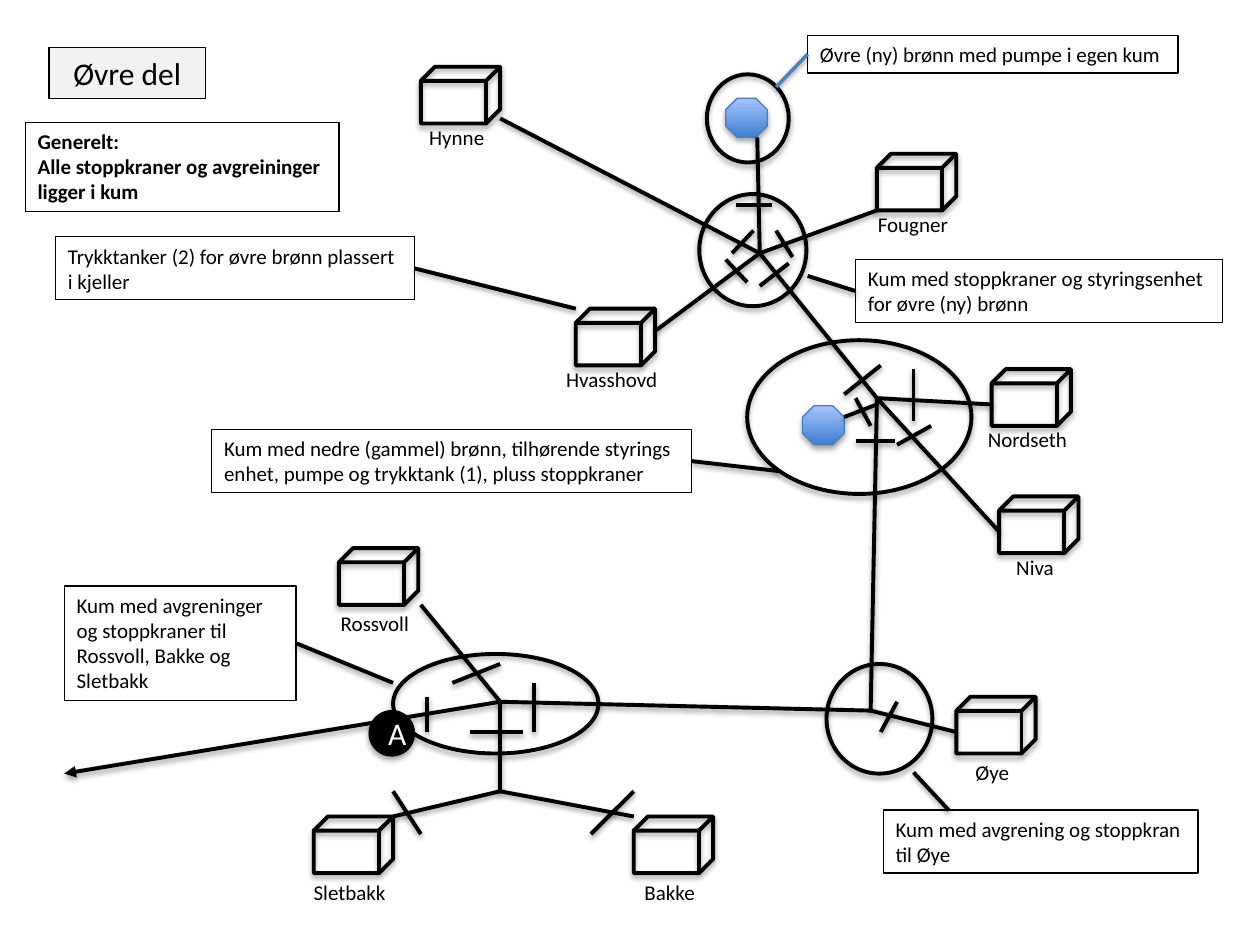
from lxml import etree
from pptx import Presentation
from pptx import util as u
from pptx.dml.color import RGBColor
from pptx.enum import shapes, text
from pptx.oxml import ns

BLACK = RGBColor(0x00, 0x00, 0x00)
WHITE = RGBColor(0xFF, 0xFF, 0xFF)
GREY = RGBColor(0xF2, 0xF2, 0xF2)
WELL_DARK = RGBColor(0x3F, 0x80, 0xCE)
WELL_LIGHT = RGBColor(0xA4, 0xC4, 0xFF)
WELL_EDGE = RGBColor(0x4B, 0x7E, 0xBC)
BLUE = RGBColor(0x4F, 0x81, 0xBD)

SHAPE = shapes.MSO_SHAPE
CENTER = text.PP_ALIGN.CENTER
LEFT_SIDE, RIGHT_SIDE = 1, 3
LABEL_WIDTH, LABEL_HEIGHT = 1.24, 0.3
HOUSE_SIZE = (0.63, 0.45)
WELL_SIZE = (0.33, 0.31)

# name, left, top, distance from house top to label top
HOUSES = [
    ("Hynne", 3.34, 0.53, 0.41), ("Fougner", 6.96, 1.22, 0.41),
    ("Hvasshovd", 4.57, 2.45, 0.41), ("Nordseth", 7.87, 2.93, 0.41),
    ("Niva", 7.93, 3.94, 0.41), ("Øye", 7.59, 5.53, 0.45),
    ("Rossvoll", 2.69, 4.35, 0.45), ("Bakke", 5.03, 6.48, 0.45),
    ("Sletbakk", 2.49, 6.48, 0.45),
]
MANHOLES = [
    (5.55, 1.54, 0.85, 0.89), (5.61, 0.59, 0.65, 0.7), (5.93, 2.7, 1.78, 1.22),
    (6.56, 5.27, 0.84, 0.87), (3.12, 5.19, 1.63, 0.79),
]
WELLS = [(5.76, 0.78), (6.37, 3.22)]

UPPER, LOWER, OYE, WEST, FORK = (6.03, 2.01), (6.96, 3.16), (6.91, 5.64), (3.97, 5.57), (3.97, 6.28)
# junction and the ends of the pipes that leave it
PIPES = [
    (UPPER, [(3.97, 0.94), (5.21, 2.62), (6.96, 1.67), (6.01, 1.09), LOWER]),
    (LOWER, [(7.87, 3.21), (7.93, 4.22), OYE]),
    (OYE, [WEST, (7.59, 5.81)]),
    (WEST, [FORK, (3.34, 4.8)]),
    (FORK, [(5.03, 6.48), (3.12, 6.48)]),
    ((6.7, 3.31), [(6.96, 3.21)]),
]
OUTLET = (0.51, 6.14)
VALVES = [
    ((5.76, 2.06), (5.93, 2.24)), ((6.16, 1.83), (6.29, 2.04)),
    ((5.98, 1.83), (5.81, 2.01)), ((6.03, 2.27), (6.26, 2.09)),
    ((5.84, 1.63), (6.13, 1.63)), ((7.25, 3.34), (7.25, 2.93)),
    ((7.12, 3.53), (7.39, 3.38)), ((6.79, 3.5), (7.1, 3.5)),
    ((6.7, 3.13), (6.99, 2.9)), ((6.91, 3.38), (6.79, 3.16)),
    ((7.12, 5.57), (6.99, 5.81)), ((3.59, 5.42), (3.97, 5.27)),
    ((3.73, 5.81), (4.15, 5.81)), ((3.39, 5.53), (3.39, 5.81)),
    ((4.24, 5.81), (4.24, 5.42)), ((4.69, 6.62), (5.03, 6.28)),
    ((3.12, 6.28), (3.34, 6.62)),
]
# wording, box, wrap, side the pointer leaves from, pointer end, pointer format
NOTES = [
    ("Kum med stoppkraner og styringsenhet\nfor øvre (ny) brønn",
     (6.79, 2.06, 2.91, 0.5), False, LEFT_SIDE, (6.41, 2.19), {}),
    ("Øvre (ny) brønn med pumpe i egen kum",
     (6.41, 0.28, 2.94, 0.3), False, LEFT_SIDE, (6.16, 0.69), {"color": BLUE, "width": 2}),
    ("Trykktanker (2) for øvre brønn plassert\ni kjeller",
     (0.44, 1.88, 2.85, 0.5), False, RIGHT_SIDE, (4.57, 2.45), {}),
    ("Kum med nedre (gammel) brønn, tilhørende styrings\n"
     "enhet, pumpe og trykktank (1), pluss stoppkraner",
     (1.68, 3.41, 3.81, 0.5), False, RIGHT_SIDE, (6.19, 3.74), {}),
    ("Kum med avgreninger og stoppkraner til Rossvoll, Bakke og Sletbakk",
     (0.51, 4.65, 1.84, 0.91), True, RIGHT_SIDE, (3.12, 5.42), {}),
]


def inches(values):
    return [u.Inches(v) for v in values]


def add_shadow(effects, dist, alpha):
    shadow = etree.SubElement(effects, ns.qn("a:outerShdw"), blurRad="40000",
                              dist=str(dist), dir="5400000", rotWithShape="0")
    color = etree.SubElement(shadow, ns.qn("a:srgbClr"), val="000000")
    etree.SubElement(color, ns.qn("a:alpha"), val=str(alpha))


def set_line(sp, color=BLACK, width=0.75):
    sp.line.color.rgb = color
    sp.line.width = u.Pt(width)


def write(tf, words, size=12, color=BLACK, bold=False, align=None):
    tf.text = words
    font_values = {"name": "Calibri", "size": u.Pt(size), "bold": bold}
    for p in tf.paragraphs:
        p.alignment = align
        for r in p.runs:
            for key, value in font_values.items():
                setattr(r.font, key, value)
            r.font.color.rgb = color


def add_symbol(s, kind, box, color=BLACK, width=2.25):
    """Add an unfilled preset shape with a soft shadow."""
    sp = s.shapes.add_shape(kind, *inches(box))
    sp.fill.background()
    set_line(sp, color, width)
    sp.shadow.inherit = False
    add_shadow(sp._element.spPr.find(ns.qn("a:effectLst")), 23000, 35000)
    return sp


def add_text(s, words, box, wrap=True, **font):
    sp = s.shapes.add_textbox(*inches(box))
    tf = sp.text_frame
    tf.word_wrap = wrap
    tf.auto_size = text.MSO_AUTO_SIZE.SHAPE_TO_FIT_TEXT
    write(tf, words, **font)
    return sp


def add_note(s, words, box, wrap=False, **font):
    sp = add_text(s, words, box, wrap, **font)
    set_line(sp)
    return sp


def add_line(s, start, end, color=BLACK, width=2.25, arrow=False):
    line = s.shapes.add_connector(shapes.MSO_CONNECTOR.STRAIGHT, *inches(start + end))
    set_line(line, color, width)
    sp_pr = line._element.spPr
    if arrow:
        etree.SubElement(sp_pr.find(ns.qn("a:ln")), ns.qn("a:tailEnd"), type="triangle")
    add_shadow(etree.SubElement(sp_pr, ns.qn("a:effectLst")), 20000, 38000)
    return line


def add_house(s, name, left, top, label_drop):
    add_symbol(s, SHAPE.CUBE, (left, top) + HOUSE_SIZE)
    label_left = left + (HOUSE_SIZE[0] - LABEL_WIDTH) / 2 - 0.03
    add_text(s, name, (label_left, top + label_drop, LABEL_WIDTH, LABEL_HEIGHT), align=CENTER)


def add_well(s, left, top):
    sp = add_symbol(s, SHAPE.OCTAGON, (left, top) + WELL_SIZE, WELL_EDGE, 0.75)
    sp.fill.gradient()
    sp.fill.gradient_angle = 90
    for stop, color, position in zip(sp.fill.gradient_stops, (WELL_DARK, WELL_LIGHT), (0, 1)):
        stop.color.rgb = color
        stop.position = position


def add_marker(s, letter, box):
    sp = add_symbol(s, SHAPE.OVAL, box, width=0.75)
    sp.fill.solid()
    sp.fill.fore_color.rgb = BLACK
    sp.text_frame.vertical_anchor = text.MSO_ANCHOR.MIDDLE
    write(sp.text_frame, letter, size=18, color=WHITE, align=CENTER)


def main():
    prs = Presentation()
    prs.slide_width, prs.slide_height = u.Inches(10), u.Inches(7.5)
    s = prs.slides.add_slide(prs.slide_layouts[6])

    title = add_note(s, "Øvre del", (0.39, 0.38, 1.24, 0.4), True, size=18, align=CENTER)
    title.fill.solid()
    title.fill.fore_color.rgb = GREY
    add_note(s, "Generelt:\nAlle stoppkraner og avgreininger\nligger i kum",
             (0.2, 0.97, 2.49, 0.71), bold=True)

    for house in HOUSES:
        add_house(s, *house)
    for box in MANHOLES:
        add_symbol(s, SHAPE.OVAL, box)
    for well in WELLS:
        add_well(s, *well)
    for junction, ends in PIPES:
        for end in ends:
            add_line(s, junction, end)
    add_line(s, WEST, OUTLET, arrow=True)
    for start, end in VALVES:
        add_line(s, start, end)

    for words, box, wrap, side, target, style in NOTES:
        note = add_note(s, words, box, wrap)
        add_line(s, box[:2], target, **style).begin_connect(note, side)
    add_note(s, "Kum med avgrening og stoppkran\ntil Øye", (7.01, 6.43, 2.5, 0.5))
    add_line(s, (7.53, 6.43), (7.25, 6.13))
    add_marker(s, "A", (2.93, 5.64, 0.36, 0.36))

    prs.save("out.pptx")


if __name__ == "__main__":
    main()
